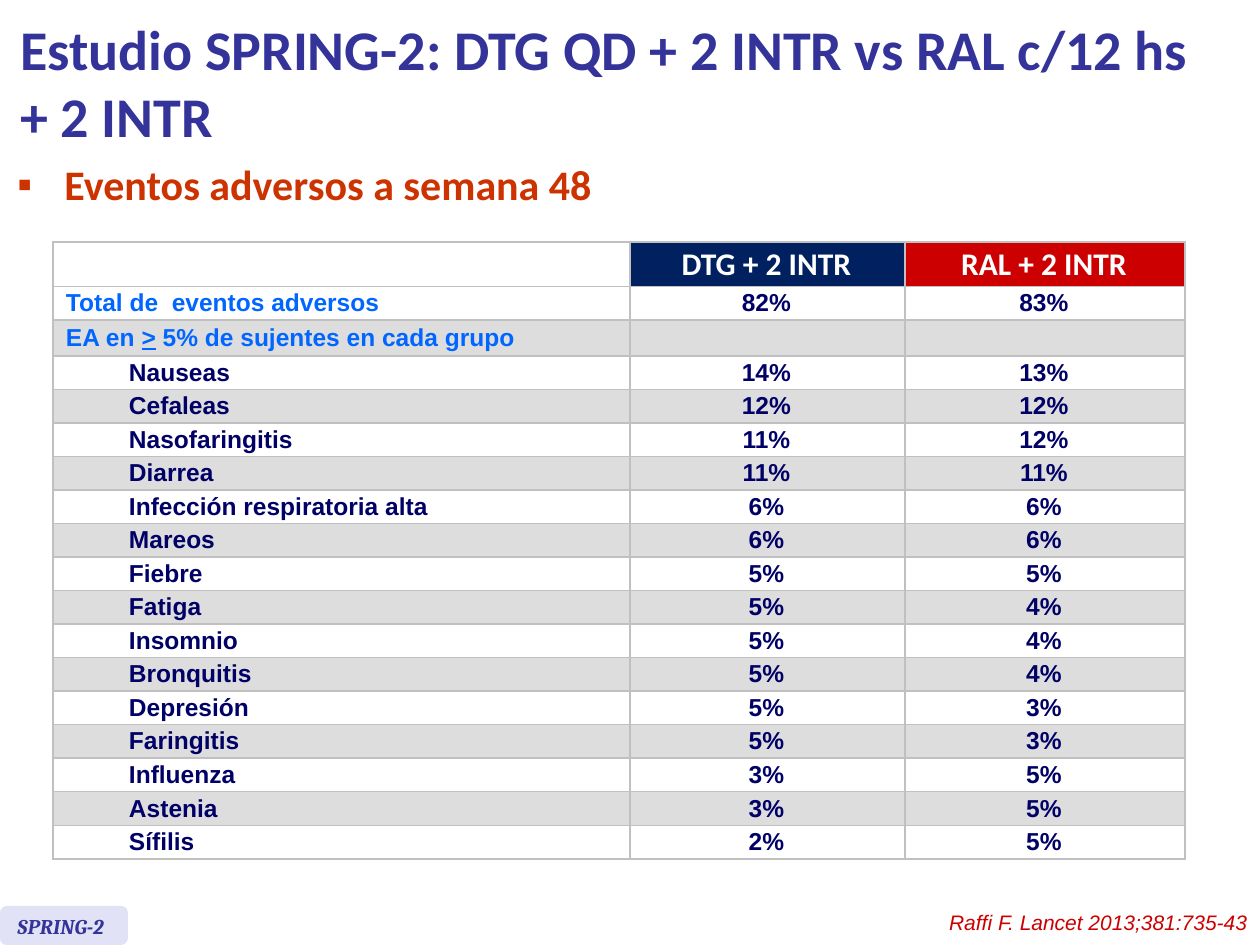
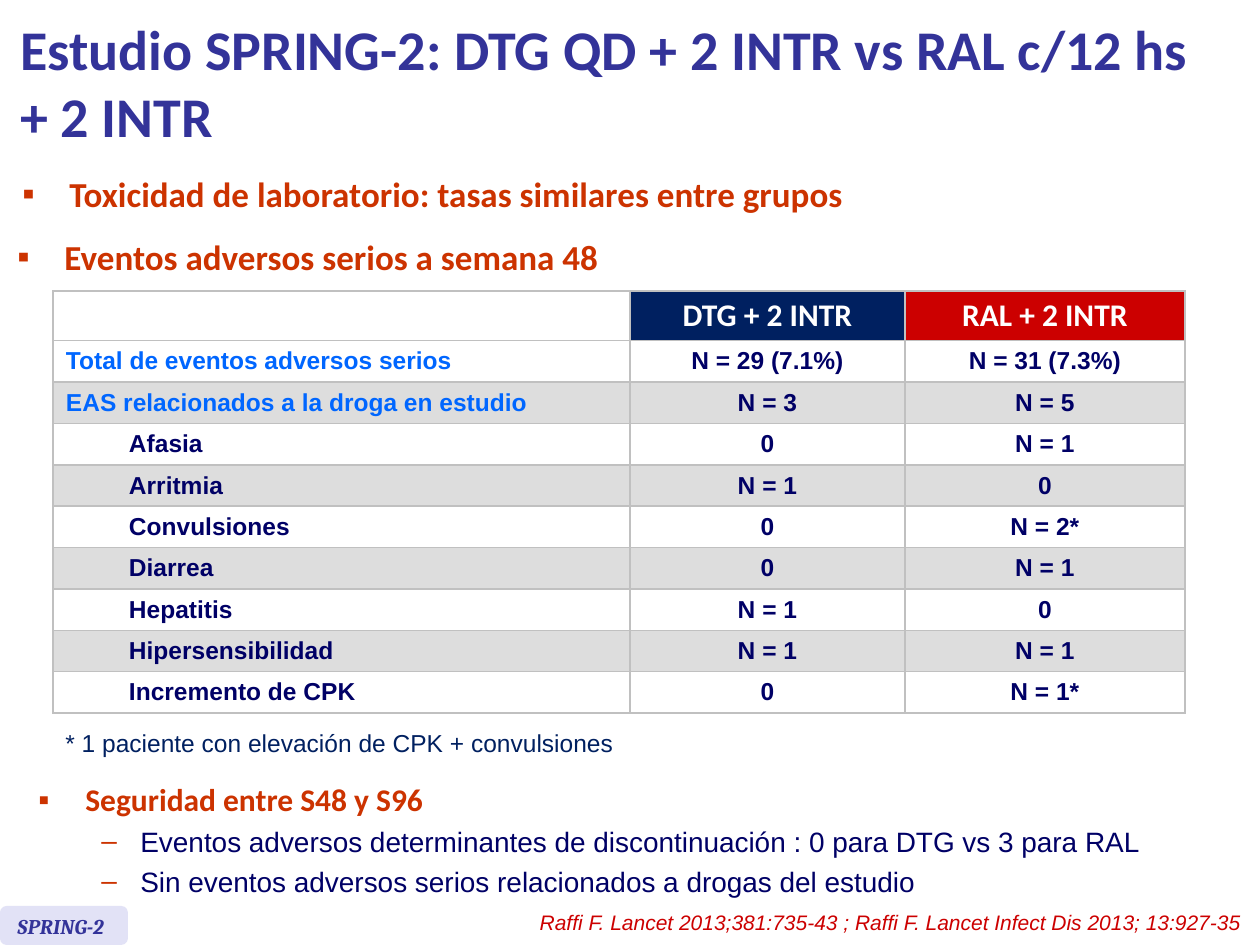
from lxml.etree import SubElement
from pptx import Presentation
from pptx.dml.color import RGBColor
from pptx.enum.shapes import MSO_SHAPE
from pptx.enum.text import MSO_ANCHOR, PP_ALIGN
from pptx.oxml.ns import qn
from pptx.util import Emu, Pt

TITLE = ("Estudio SPRING-2: DTG QD + 2 INTR vs RAL c/12 hs", "+ 2 INTR")
STUDY = "SPRING-2"
ARMS = ("DTG + 2 INTR", "RAL + 2 INTR")
HEADER_FILLS = ("002060", "CC0000")
BAND_FILLS = ("FFFFFF", "DDDDDD")
COLUMN_WIDTHS = (577, 275, 280)
SUMMARY_ROWS = 2

NAVY, INDIGO, ORANGE = "000066", "333399", "CC3300"
SKY, RED, WHITE = "0066FF", "CC0000", "FFFFFF"
LAVENDER, BORDER, NOTE = "E2E2F6", "C0C0C0", "002060"

SLIDES = [
    {
        "table": {
            "top": 242,
            "row_heights": (34, 29),
            "margins": (13, 3, 15, 3),
            "rows": [
                (("Total de  eventos adversos",), "82%", "83%"),
                (("EA en ", ">", " 5% de sujentes en cada grupo"), "", ""),
                (("Nauseas",), "14%", "13%"),
                (("Cefaleas",), "12%", "12%"),
                (("Nasofaringitis",), "11%", "12%"),
                (("Diarrea",), "11%", "11%"),
                (("Infección respiratoria alta",), "6%", "6%"),
                (("Mareos",), "6%", "6%"),
                (("Fiebre",), "5%", "5%"),
                (("Fatiga",), "5%", "4%"),
                (("Insomnio",), "5%", "4%"),
                (("Bronquitis",), "5%", "4%"),
                (("Depresión",), "5%", "3%"),
                (("Faringitis",), "5%", "3%"),
                (("Influenza",), "3%", "5%"),
                (("Astenia",), "3%", "5%"),
                (("Sífilis",), "2%", "5%"),
            ],
        },
        "bullets": [
            ((5, 163, 1244, 64), 24, "Eventos adversos a semana 48", ()),
        ],
        "footnote": None,
        "citation": "Raffi F. Lancet 2013;381:735-43",
    },
    {
        "table": {
            "top": 291,
            "row_heights": (45, 38),
            "margins": (13, 6, 13, 6),
            "rows": [
                (("Total de eventos adversos serios",), "N = 29 (7.1%)", "N = 31 (7.3%)"),
                (("EAS relacionados a la droga en estudio",), "N = 3", "N = 5"),
                (("Afasia",), "0", "N = 1"),
                (("Arritmia",), "N = 1", "0"),
                (("Convulsiones",), "0", "N = 2*"),
                (("Diarrea",), "0", "N = 1"),
                (("Hepatitis",), "N = 1", "0"),
                (("Hipersensibilidad",), "N = 1", "N = 1"),
                (("Incremento de CPK",), "0", "N = 1*"),
            ],
        },
        "bullets": [
            ((10, 168, 1244, 64), 20, "Toxicidad de laboratorio: tasas similares entre grupos", ()),
            ((5, 231, 1244, 64), 20, "Eventos adversos serios a semana 48", ()),
            ((26, 772, 1181, 147), 18, "Seguridad entre S48 y S96", (
                "Eventos adversos determinantes de discontinuación : 0 para DTG vs 3 para RAL",
                "Sin eventos adversos serios relacionados a drogas del estudio",
            )),
        ],
        "footnote": "* 1 paciente con elevación de CPK + convulsiones",
        "citation": "Raffi F. Lancet 2013;381:735-43 ; Raffi F. Lancet Infect Dis 2013; 13:927-35 ",
    },
]


def px(value):
    return Emu(round(value * 914400 / 126))


def color(value):
    return RGBColor.from_string(value)


def add_run(paragraph, text, size, font, fill, bold=False, italic=False, underline=False):
    run = paragraph.add_run()
    run.text = text
    run.font.size = Pt(size)
    run.font.name = font
    run.font.color.rgb = color(fill)
    run.font.bold = bold
    run.font.italic = italic
    run.font.underline = underline


def add_text_frame(shapes, box):
    frame = shapes.add_textbox(*map(px, box)).text_frame
    frame.word_wrap = True
    return frame


def indent(paragraph, left, hanging=0):
    properties = paragraph._p.get_or_add_pPr()
    properties.set("marL", str(px(left)))
    properties.set("indent", str(px(-hanging)))
    return properties


def add_bullet(paragraph, symbol, left, hanging):
    properties = indent(paragraph, left, hanging)
    bullet_color = SubElement(properties, qn("a:buClr"))
    SubElement(bullet_color, qn("a:srgbClr"), val=ORANGE)
    SubElement(properties, qn("a:buFont"), typeface="Arial")
    SubElement(properties, qn("a:buChar"), char=symbol)
    paragraph.line_spacing = Pt(22.8)


def add_bullets(slide, box, size, heading, details):
    frame = add_text_frame(slide.shapes, box)
    paragraph = frame.paragraphs[0]
    add_bullet(paragraph, "▪", 47, 47)
    add_run(paragraph, heading, size, "Calibri", ORANGE, bold=True)
    for detail in details:
        paragraph = frame.add_paragraph()
        paragraph.level = 1
        add_bullet(paragraph, "–", 102, 39)
        add_run(paragraph, detail, 16, "Arial", NAVY)


def style_cell(cell, fill, margins):
    cell.margin_left, cell.margin_top, cell.margin_right, cell.margin_bottom = map(px, margins)
    cell.vertical_anchor = MSO_ANCHOR.MIDDLE
    properties = cell._tc.get_or_add_tcPr()
    for side in ("a:lnL", "a:lnR", "a:lnT", "a:lnB"):
        line = SubElement(properties, qn(side), w=str(Pt(1)))
        line_fill = SubElement(line, qn("a:solidFill"))
        SubElement(line_fill, qn("a:srgbClr"), val=BORDER)
    if fill:
        cell.fill.solid()
        cell.fill.fore_color.rgb = color(fill)
    else:
        cell.fill.background()


def add_value(cell, text, size, font, fill):
    paragraph = cell.text_frame.paragraphs[0]
    paragraph.alignment = PP_ALIGN.CENTER
    if text:
        add_run(paragraph, text, size, font, fill, bold=True)
    else:
        SubElement(paragraph._p, qn("a:endParaRPr"), sz=str(size * 100))


def add_events_table(slide, top, row_heights, margins, rows):
    header_height, body_height = row_heights
    height = header_height + body_height * len(rows)
    table = slide.shapes.add_table(
        len(rows) + 1, len(COLUMN_WIDTHS), px(53), px(top), px(sum(COLUMN_WIDTHS)), px(height)
    ).table
    table.first_row = False
    table.horz_banding = False
    for column, width in zip(table.columns, COLUMN_WIDTHS):
        column.width = px(width)
    for index, row in enumerate(table.rows):
        row.height = px(body_height if index else header_height)

    style_cell(table.cell(0, 0), None, margins)
    for column, (arm, fill) in enumerate(zip(ARMS, HEADER_FILLS), 1):
        cell = table.cell(0, column)
        style_cell(cell, fill, margins)
        add_value(cell, arm, 18, "Calibri", WHITE)

    for index, (label, *values) in enumerate(rows):
        cells = table.rows[index + 1].cells
        for cell in cells:
            style_cell(cell, BAND_FILLS[index % 2], margins)
        is_summary = index < SUMMARY_ROWS
        paragraph = cells[0].text_frame.paragraphs[0]
        if not is_summary:
            paragraph.level = 1
            indent(paragraph, 63)
        for position, piece in enumerate(label):
            add_run(paragraph, piece, 14, "Arial", SKY if is_summary else NAVY,
                    bold=True, underline=position % 2 == 1)
        for column, value in enumerate(values, 1):
            add_value(cells[column], value, 14, "Arial", NAVY)


def add_title(slide):
    frame = add_text_frame(slide.shapes, (8, 6, 1203, 152))
    frame.vertical_anchor = MSO_ANCHOR.MIDDLE
    paragraph = frame.paragraphs[0]
    for index, line in enumerate(TITLE):
        if index:
            paragraph.add_line_break()
        add_run(paragraph, line, 32, "Calibri", INDIGO, bold=True)


def add_footer(slide, citation):
    paragraph = add_text_frame(slide.shapes, (514, 903, 746, 38)).paragraphs[0]
    paragraph.alignment = PP_ALIGN.RIGHT
    add_run(paragraph, citation, 12, "Arial", RED, italic=True)

    study_tag = slide.shapes.add_group_shape()
    plate = study_tag.shapes.add_shape(
        MSO_SHAPE.ROUNDED_RECTANGLE, *map(px, (0, 906, 128, 39))
    )
    plate.shadow.inherit = False
    plate.fill.solid()
    plate.fill.fore_color.rgb = color(LAVENDER)
    plate.line.fill.background()
    paragraph = add_text_frame(study_tag.shapes, (5, 907, 118, 38)).paragraphs[0]
    add_run(paragraph, STUDY, 12, "Cambria", INDIGO, bold=True, italic=True)


def main():
    presentation = Presentation()
    presentation.slide_width = px(1260)
    presentation.slide_height = px(945)
    for content in SLIDES:
        slide = presentation.slides.add_slide(presentation.slide_layouts[6])
        add_events_table(slide, **content["table"])
        for bullets in content["bullets"]:
            add_bullets(slide, *bullets)
        if content["footnote"]:
            frame = add_text_frame(slide.shapes, (53, 722, 583, 43))
            add_run(frame.paragraphs[0], content["footnote"], 14, "Arial", NOTE)
        add_title(slide)
        add_footer(slide, content["citation"])
    presentation.save("out.pptx")


if __name__ == "__main__":
    main()
